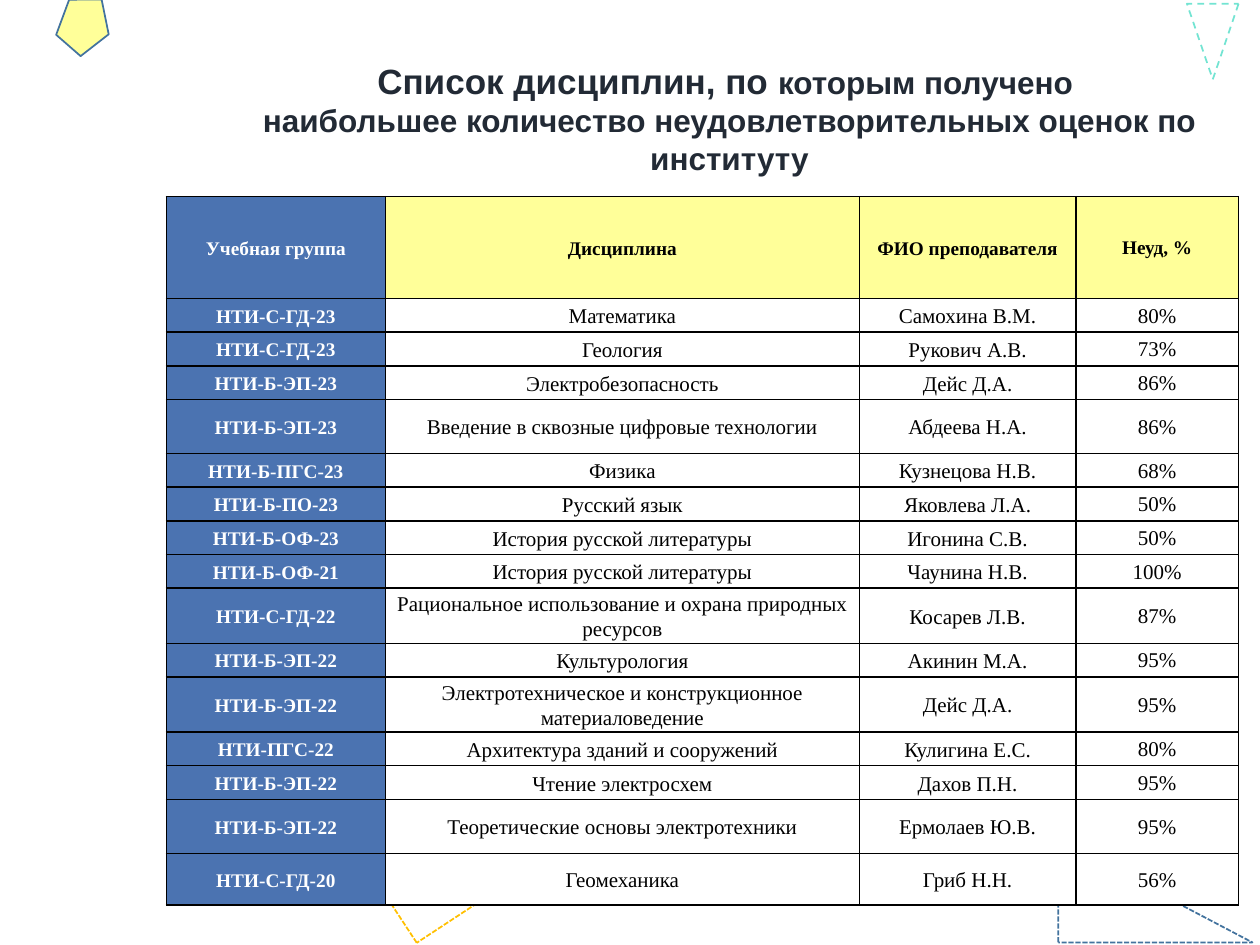
from dataclasses import dataclass
from typing import NamedTuple, Optional

from lxml import etree
from pptx import Presentation
from pptx import util as u
from pptx.dml.color import RGBColor
from pptx.enum import dml, shapes, text
from pptx.oxml import ns


@dataclass(frozen=True)
class Theme:
    title_font: str = "Arial"
    table_font: str = "Times New Roman"
    ink: str = "222A35"
    black: str = "000000"
    white: str = "FFFFFF"
    blue: str = "4B73B1"
    yellow: str = "FFFF99"
    outline: str = "43739E"
    gold: str = "FFC000"
    mint: str = "73E4D2"
    title_large: int = 20
    title_small: int = 18
    label: int = 11
    body: int = 12


class Box(NamedTuple):
    """Left, top, width and height in percent of the slide."""
    x: float
    y: float
    w: float
    h: float


@dataclass(frozen=True)
class Ornament:
    kind: shapes.MSO_SHAPE
    box: Box
    line: str
    rotation: float = 0
    fill: Optional[str] = None
    dash: Optional[dml.MSO_LINE] = None


class Result(NamedTuple):
    group: str
    subject: str
    teacher: str
    failed: str
    height: Optional[float] = None  # None: an equal share of what is left


T = Theme()
WIDTH, HEIGHT = u.Inches(10), u.Inches(7.5)
TALL, LAST, HEADER = 5.73, 5.47, 10.8  # row heights, percent of the slide
TABLE_BOX = Box(13.2, 20.8, 85.1, 74.8)
COLUMNS = (17.4, 37.6, 17.2, 12.9)
TITLE_BOX = Box(16.5, 5.6, 82.8, 13.87)

BACK = (
    Ornament(shapes.MSO_SHAPE.RIGHT_TRIANGLE, Box(30.2, 86.93, 12, 9.2), T.gold,
             326.7, dash=dml.MSO_LINE.SQUARE_DOT),
    Ornament(shapes.MSO_SHAPE.RIGHT_TRIANGLE, Box(84, 88.93, 15.4, 10.8), T.outline,
             dash=dml.MSO_LINE.SQUARE_DOT),
)
FRONT = (
    Ornament(shapes.MSO_SHAPE.REGULAR_PENTAGON, Box(4.4, 0.13, 4.8, 5.2), T.outline,
             110.3, T.yellow),
    Ornament(shapes.MSO_SHAPE.ISOSCELES_TRIANGLE, Box(94.2, 0.4, 4.1, 8), T.mint,
             180, T.white, dml.MSO_LINE.DASH),
)

ROWS = (
    Result("Учебная группа", "Дисциплина", "ФИО преподавателя", "Неуд, %", HEADER),
    Result("НТИ-С-ГД-23", "Математика", "Самохина В.М.", "80%"),
    Result("НТИ-С-ГД-23", "Геология", "Рукович А.В.", "73%"),
    Result("НТИ-Б-ЭП-23", "Электробезопасность", "Дейс Д.А.", "86%"),
    Result("НТИ-Б-ЭП-23", "Введение в сквозные цифровые технологии",
           "Абдеева Н.А.", "86%", TALL),
    Result("НТИ-Б-ПГС-23", "Физика", "Кузнецова Н.В.", "68%"),
    Result("НТИ-Б-ПО-23", "Русский язык", "Яковлева Л.А.", "50%"),
    Result("НТИ-Б-ОФ-23", "История русской литературы", "Игонина С.В.", "50%"),
    Result("НТИ-Б-ОФ-21", "История русской литературы", "Чаунина Н.В.", "100%"),
    Result("НТИ-С-ГД-22", "Рациональное использование и охрана природных ресурсов",
           "Косарев Л.В.", "87%", TALL),
    Result("НТИ-Б-ЭП-22", "Культурология", "Акинин М.А.", "95%"),
    Result("НТИ-Б-ЭП-22", "Электротехническое и конструкционное материаловедение",
           "Дейс Д.А.", "95%", TALL),
    Result("НТИ-ПГС-22", "Архитектура зданий и сооружений", "Кулигина Е.С.", "80%"),
    Result("НТИ-Б-ЭП-22", "Чтение электросхем", "Дахов П.Н.", "95%"),
    Result("НТИ-Б-ЭП-22", "Теоретические основы электротехники",
           "Ермолаев Ю.В.", "95%", TALL),
    Result("НТИ-С-ГД-20", "Геомеханика", "Гриб Н.Н.", "56%", LAST),
)


def across(share: float) -> int:
    return round(WIDTH * share / 100)


def down(share: float) -> int:
    return round(HEIGHT * share / 100)


def place(box: Box) -> tuple[int, int, int, int]:
    return across(box.x), down(box.y), across(box.w), down(box.h)


def style(font, name: str, size: int, color: str, bold: bool) -> None:
    font.name, font.size, font.bold = name, u.Pt(size), bold
    font.color.rgb = RGBColor.from_string(color)


def draw_ornament(s, item: Ornament) -> None:
    sp = s.shapes.add_shape(item.kind, *place(item.box))
    sp.shadow.inherit = False
    sp.rotation = item.rotation
    sp.line.color.rgb = RGBColor.from_string(item.line)
    sp.line.width = u.Pt(1)
    if item.dash is not None:
        sp.line.dash_style = item.dash
    if item.fill:
        sp.fill.solid()
        sp.fill.fore_color.rgb = RGBColor.from_string(item.fill)
    else:
        sp.fill.background()


def draw_title(s) -> None:
    sp = s.shapes.title
    sp.left, sp.top, sp.width, sp.height = place(TITLE_BOX)
    tf = sp.text_frame
    tf.word_wrap = True
    tf.auto_size = text.MSO_AUTO_SIZE.SHAPE_TO_FIT_TEXT
    tf.vertical_anchor = text.MSO_ANCHOR.TOP
    p = tf.paragraphs[0]
    p.alignment = text.PP_ALIGN.CENTER
    p.font.size = u.Pt(T.title_small)
    parts = (("Список дисциплин, по ", T.title_large),
             ("которым получено ", T.title_small),
             ("наибольшее количество неудовлетворительных оценок по институту",
              T.title_small))
    for i, (words, size) in enumerate(parts):
        if i == 2:
            p.add_line_break()
        r = p.add_run()
        r.text = words
        style(r.font, T.title_font, size, T.ink, True)


def add_borders(cell) -> None:
    tc_pr = cell._tc.get_or_add_tcPr()
    for side in ("a:lnL", "a:lnR", "a:lnT", "a:lnB"):
        ln = etree.SubElement(tc_pr, ns.qn(side), w=str(u.Pt(1)))
        fill = etree.SubElement(ln, ns.qn("a:solidFill"))
        etree.SubElement(fill, ns.qn("a:srgbClr"), val=T.black)


def fill_cell(cell, words: str, row: int, col: int) -> None:
    is_label = row == 0 or col == 0
    add_borders(cell)
    cell.fill.solid()
    back = T.blue if col == 0 else T.yellow if row == 0 else T.white
    cell.fill.fore_color.rgb = RGBColor.from_string(back)
    cell.vertical_anchor = text.MSO_ANCHOR.MIDDLE
    is_percent = col == len(COLUMNS) - 1
    cell.margin_left = cell.margin_right = u.Inches(0 if is_percent else 0.04)
    cell.margin_top = u.Inches(0 if is_percent else 0.01)
    cell.margin_bottom = 0
    p = cell.text_frame.paragraphs[0]
    p.text = words
    p.alignment = text.PP_ALIGN.CENTER
    p.line_spacing, p.space_after = 1.07, u.Pt(8)
    style(p.runs[0].font, T.table_font, T.label if is_label else T.body,
          T.white if col == 0 else T.black, is_label)


def draw_table(s) -> None:
    table = s.shapes.add_table(len(ROWS), len(COLUMNS), *place(TABLE_BOX)).table
    table.first_row = table.horz_banding = False
    for column, share in zip(table.columns, COLUMNS):
        column.width = across(share)
    # Single-line rows share the height the fixed rows leave
    fixed = [row.height for row in ROWS if row.height]
    single = (TABLE_BOX.h - sum(fixed)) / (len(ROWS) - len(fixed))
    for i, result in enumerate(ROWS):
        table.rows[i].height = down(result.height or single)
        for j, words in enumerate(result[:len(COLUMNS)]):
            fill_cell(table.cell(i, j), words, i, j)


def main() -> None:
    prs = Presentation()
    prs.slide_width, prs.slide_height = WIDTH, HEIGHT
    s = prs.slides.add_slide(prs.slide_layouts[5])
    # Ornaments behind the table
    for item in BACK:
        draw_ornament(s, item)
    draw_title(s)
    draw_table(s)
    # Ornaments in the top corners
    for item in FRONT:
        draw_ornament(s, item)
    prs.save("out.pptx")


if __name__ == "__main__":
    main()
